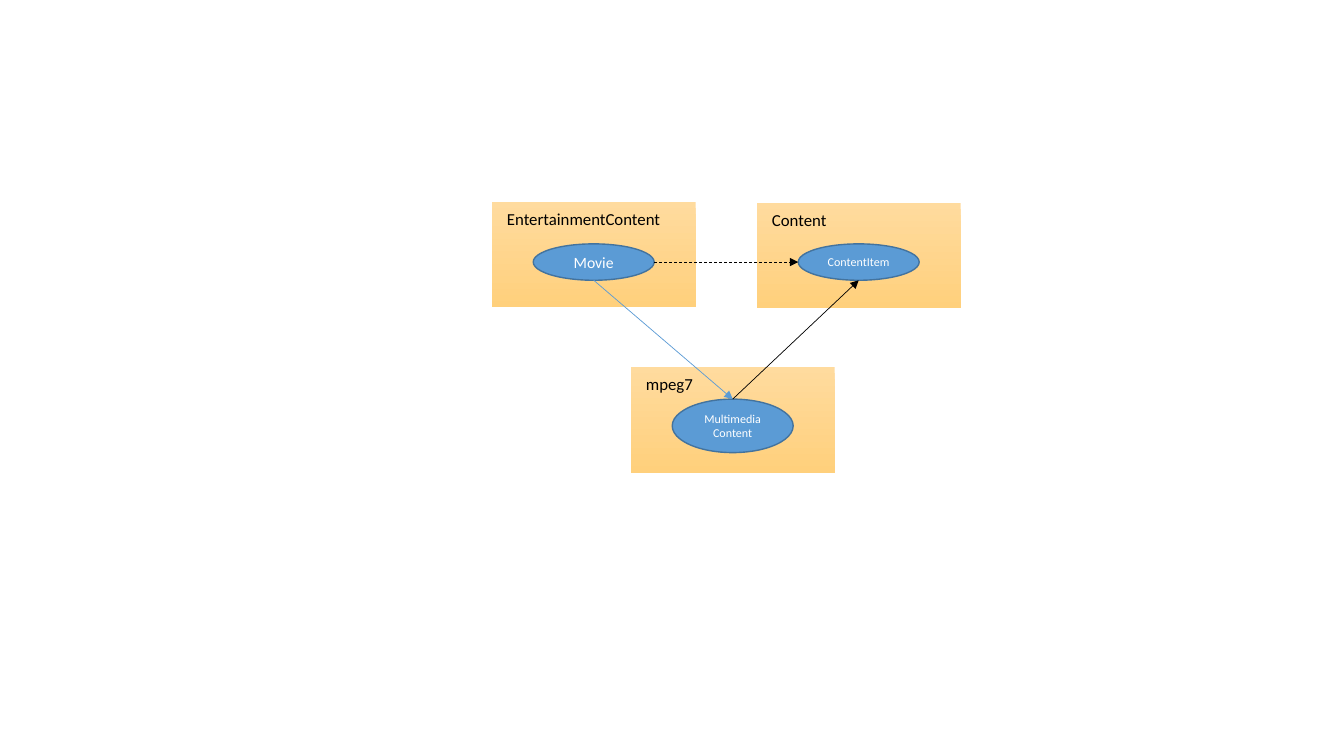
import dataclasses

import pptx
import pptx.dml.color
import pptx.enum.dml
import pptx.enum.shapes
import pptx.enum.text
import pptx.oxml
import pptx.oxml.ns
import pptx.util

Pt = pptx.util.Pt
SHAPES = pptx.enum.shapes.MSO_SHAPE


@dataclasses.dataclass(frozen=True)
class Theme:
    font: str = "Calibri"
    ink: str = "000000"
    paper: str = "FFFFFF"
    node: str = "5B9BD5"
    node_edge: str = "43739E"
    panel_top: str = "FFDB9E"
    panel_bottom: str = "FFD07C"
    label_size: float = 12
    large_size: float = 11.2
    small_size: float = 8.6
    edge_width: float = 1
    link_width: float = 0.5


def rgb(value):
    return pptx.dml.color.RGBColor.from_string(value)


def write_text(frame, text, *, font, size, color, align, anchor, margins):
    frame.word_wrap = True
    frame.vertical_anchor = anchor
    frame.margin_left = frame.margin_right = Pt(margins[0])
    frame.margin_top = frame.margin_bottom = Pt(margins[1])
    frame.text = text
    for para in frame.paragraphs:
        para.alignment = align
        for span in para.runs:
            span.font.name = font
            span.font.size = Pt(size)
            span.font.color.rgb = rgb(color)


class Diagram:
    def __init__(self, page, theme):
        self.page = page
        self.theme = theme

    def panel(self, left, top, label):
        box = self.page.shapes.add_shape(
            SHAPES.RECTANGLE, Pt(left), Pt(top), Pt(145.44), Pt(75.6))
        box.shadow.inherit = False
        box.line.fill.background()
        box.fill.gradient()
        box.fill.gradient_angle = 270
        colors = (self.theme.panel_top, self.theme.panel_bottom)
        for position, (stop, color) in enumerate(zip(box.fill.gradient_stops, colors)):
            stop.position = position
            stop.color.rgb = rgb(color)
        caption = self.page.shapes.add_textbox(
            Pt(left + 3.6), Pt(top + 1.2), Pt(126), Pt(21.8))
        write_text(caption.text_frame, label, font=self.theme.font,
                   size=self.theme.label_size, color=self.theme.ink,
                   align=pptx.enum.text.PP_ALIGN.LEFT,
                   anchor=pptx.enum.text.MSO_ANCHOR.TOP, margins=(7.2, 3.6))

    def node(self, left, top, height, text, size):
        oval = self.page.shapes.add_shape(
            SHAPES.OVAL, Pt(left), Pt(top), Pt(86.4), Pt(height))
        oval.shadow.inherit = False
        oval.fill.solid()
        oval.fill.fore_color.rgb = rgb(self.theme.node)
        oval.line.color.rgb = rgb(self.theme.node_edge)
        oval.line.width = Pt(self.theme.edge_width)
        write_text(oval.text_frame, text, font=self.theme.font, size=size,
                   color=self.theme.paper, align=pptx.enum.text.PP_ALIGN.CENTER,
                   anchor=pptx.enum.text.MSO_ANCHOR.MIDDLE, margins=(0, 0))
        return oval

    def arrow(self, start, end, color, dash=None):
        link = self.page.shapes.add_connector(
            pptx.enum.shapes.MSO_CONNECTOR.STRAIGHT, *start, *end)
        link.line.color.rgb = rgb(color)
        link.line.width = Pt(self.theme.link_width)
        if dash is not None:
            link.line.dash_style = dash
        head = pptx.oxml.parse_xml(
            f'<a:tailEnd {pptx.oxml.ns.nsdecls("a")} type="triangle"/>')
        link.line._get_or_add_ln().append(head)
        effects = pptx.oxml.parse_xml(
            f'<a:effectLst {pptx.oxml.ns.nsdecls("a")}/>')
        link._element.spPr.append(effects)


def side(shape, across, down):
    return (shape.left + int(shape.width * across),
            shape.top + int(shape.height * down))


def main():
    deck = pptx.Presentation()
    deck.slide_width, deck.slide_height = Pt(960), Pt(540)
    theme = Theme()
    diagram = Diagram(deck.slides.add_slide(deck.slide_layouts[6]), theme)

    diagram.panel(450.7, 262.1, "mpeg7")
    diagram.panel(540.7, 144.7, "Content")
    diagram.panel(351.4, 144, "EntertainmentContent")

    movie = diagram.node(380.9, 174.2, 26, "Movie", theme.large_size)
    item = diagram.node(570.2, 174.2, 26, "ContentItem", theme.small_size)
    multimedia = diagram.node(480.2, 285.1, 38.2, "Multimedia\nContent", theme.small_size)

    diagram.arrow(side(movie, 1, 0.5), side(item, 0, 0.5), theme.ink,
                  pptx.enum.dml.MSO_LINE.DASH)
    diagram.arrow(side(movie, 0.5, 1), side(multimedia, 0.5, 0), theme.node)
    diagram.arrow(side(multimedia, 0.5, 0), side(item, 0.5, 1), theme.ink)

    deck.save("out.pptx")


if __name__ == "__main__":
    main()
